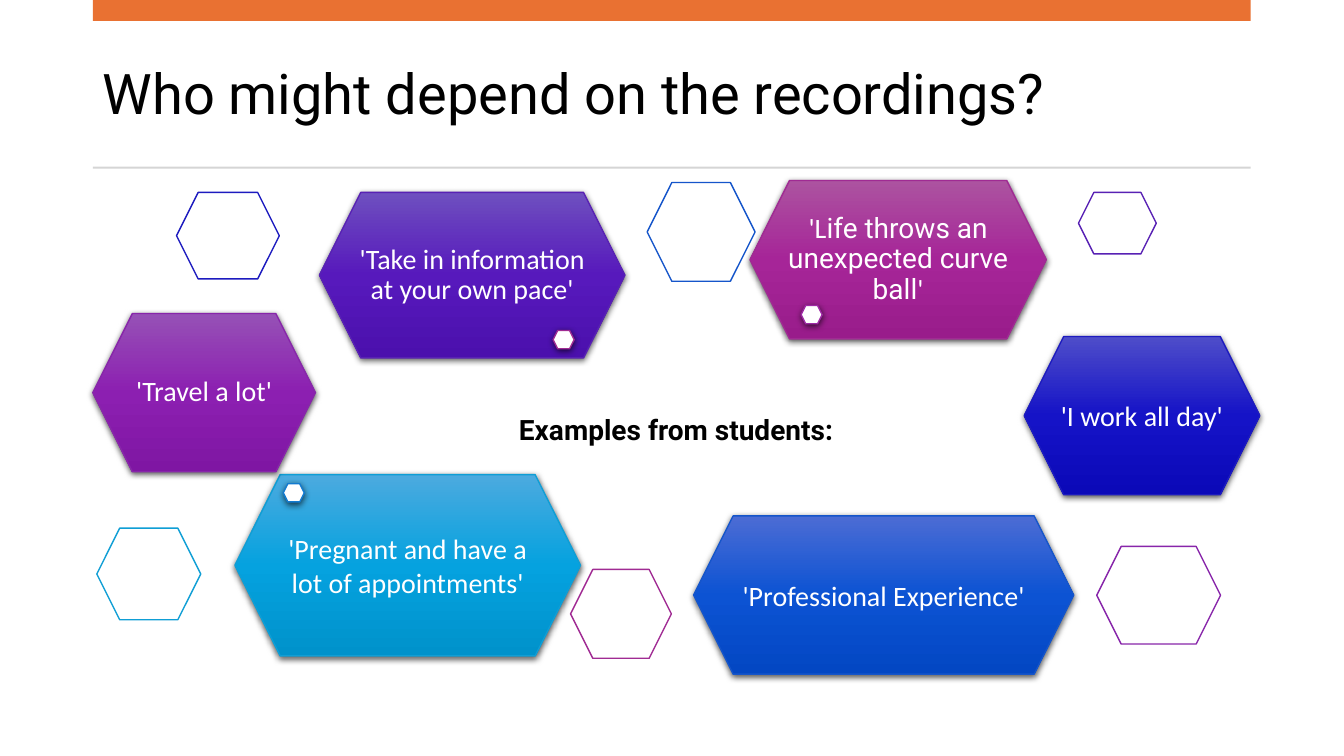
"""Builds the slide on who might depend on the recordings."""
from copy import deepcopy
from dataclasses import dataclass

from lxml import etree
from pptx import Presentation
from pptx.dml.color import RGBColor
from pptx.enum.shapes import MSO_SHAPE
from pptx.enum.text import MSO_ANCHOR, PP_ALIGN
from pptx.oxml.ns import qn
from pptx.util import Cm, Pt

HEXAGON, RECTANGLE = MSO_SHAPE.HEXAGON, MSO_SHAPE.RECTANGLE
CENTER, LEFT = PP_ALIGN.CENTER, PP_ALIGN.LEFT
MIDDLE, TOP = MSO_ANCHOR.MIDDLE, MSO_ANCHOR.TOP


@dataclass(frozen=True)
class Theme:
    heading: str = "Roboto"
    body: str = "Calibri"
    title_size: int = 40
    text_size: int = 20
    line_width: int = 1
    tight: float = 0.9
    black: str = "000000"
    white: str = "FFFFFF"
    accent: str = "E97132"
    rule: str = "D5D5D5"


THEME = Theme()
BODY, HEADING = THEME.body, THEME.heading

TITLE = "Who might depend on the recordings?"
TITLE_AREA = (2.34, 0.94, 29.18, 3)
CAPTION = "Examples from students:"
CAPTION_AREA = (12.83, 10.26, 17.58, 2.36)
BARS = [
    ((2.34, 0, 29.18, 0.53), THEME.accent),
    ((2.34, 4.2, 29.18, 0.05), THEME.rule),
]

REASONS = [
    ((5.92, 11.96, 8.71, 4.57), ("4CAADF", "05A2DF", "0092CB"), "0F9ED5", 1.0,
     [("'Pregnant and have a lot of appointments'", BODY)]),
    ((17.48, 13, 9.58, 3.99), ("4C6CD4", "0C53D3", "0347C3"), "1555CA", 1.0,
     [("'Professional Experience'", BODY)]),
    ((25.81, 8.48, 5.94, 3.99), ("4E4DC9", "1513C7", "0B09B8"), "1D1BBF", 1.0,
     [("'I work all day'", BODY)]),
    ((8.05, 4.85, 7.7, 4.17), ("6E4FBF", "5719BC", "4B10AD"), "5821B4", THEME.tight,
     [("'Take in information at your own pace'", BODY)]),
    ((2.34, 7.9, 5.61, 3.99), ("9651B6", "8C1FB1", "7F16A3"), "8826AA", THEME.tight,
     [("'Travel a lot'", BODY)]),
    ((18.9, 4.55, 7.47, 3.99), ("AC53A0", "A62598", "991C8B"), "A02B93", THEME.tight,
     [("'L", BODY), ("ife throws an unexpected curve ball", HEADING), ("'", BODY)]),
]

OUTLINES = [
    ((2.44, 13.31, 2.62, 2.31), "0F9ED5"),
    ((16.31, 4.6, 2.72, 2.49), "1555CA"),
    ((4.45, 4.85, 2.59, 2.18), "1D1BBF"),
    ((27.18, 4.85, 1.96, 1.55), "5821B4"),
    ((27.64, 13.77, 3.12, 2.46), "8826AA"),
    ((14.38, 14.35, 2.54, 2.24), "A02B93"),
]

DOT_SIZE = (0.53, 0.46)
DOTS = [
    ((7.14, 12.19), "127BD0"),
    ((13.94, 8.33), "A02B93"),
    ((20.19, 7.7), "9E29A5"),
]


def color(value):
    return RGBColor.from_string(value)


def add_form(page, kind, area, fill, line=None):
    form = page.shapes.add_shape(kind, *map(Cm, area))
    form.shadow.inherit = False
    form.fill.solid()
    form.fill.fore_color.rgb = color(fill)
    if line:
        form.line.color.rgb = color(line)
        form.line.width = Pt(THEME.line_width)
    else:
        form.line.fill.background()
    return form


def add_hexagon(page, area, fill, line):
    form = add_form(page, HEXAGON, area, fill, line)
    form.adjustments[0] = 0.25
    return form


def add_shadow(form):
    effects = form._element.spPr.find(qn("a:effectLst"))
    shadow = etree.SubElement(effects, qn("a:outerShdw"), blurRad=str(Pt(4.5)),
                              dist=str(Pt(1.5)), dir="5400000", rotWithShape="0")
    tone = etree.SubElement(shadow, qn("a:srgbClr"), val=THEME.black)
    etree.SubElement(tone, qn("a:alpha"), val="63000")


def shade(form, tones):
    form.fill.gradient()
    form.fill.gradient_angle = 270
    stop_list = form._element.spPr.find(qn("a:gradFill")).find(qn("a:gsLst"))
    stop_list.append(deepcopy(stop_list[0]))
    for index, (stop, tone) in enumerate(zip(form.fill.gradient_stops, tones)):
        stop.color.rgb = color(tone)
        stop.position = index / (len(tones) - 1)


def write(box, spans, size, tone, align=LEFT, anchor=MIDDLE, spacing=1.0, bold=False):
    frame = box.text_frame
    frame.word_wrap = True
    frame.vertical_anchor = anchor
    para = frame.paragraphs[0]
    para.alignment = align
    para.line_spacing = spacing
    for text, font in spans:
        span = para.add_run()
        span.text = text
        span.font.name = font
        span.font.size = Pt(size)
        span.font.bold = bold
        span.font.color.rgb = color(tone)


def add_reason(page, area, tones, line, spacing, spans):
    form = add_hexagon(page, area, tones[1], line)
    shade(form, tones)
    add_shadow(form)
    frame = form.text_frame
    frame.margin_left = frame.margin_right = 0
    frame.margin_top = frame.margin_bottom = Cm(0.08)
    write(form, spans, THEME.text_size, THEME.white, CENTER, spacing=spacing)


def main():
    deck = Presentation()
    deck.slide_width, deck.slide_height = Cm(33.87), Cm(19.05)
    page = deck.slides.add_slide(deck.slide_layouts[6])

    title = page.shapes.add_textbox(*map(Cm, TITLE_AREA))
    write(title, [(TITLE, HEADING)], THEME.title_size, THEME.black, spacing=THEME.tight)
    for area, fill in BARS:
        add_form(page, RECTANGLE, area, fill)
    for area, line in OUTLINES:
        add_hexagon(page, area, THEME.white, line)
    for reason in REASONS:
        add_reason(page, *reason)
    for corner, line in DOTS:
        add_shadow(add_hexagon(page, corner + DOT_SIZE, THEME.white, line))
    caption = page.shapes.add_textbox(*map(Cm, CAPTION_AREA))
    write(caption, [(CAPTION, HEADING)], THEME.text_size, THEME.black, anchor=TOP, bold=True)

    deck.save("out.pptx")


if __name__ == "__main__":
    main()
